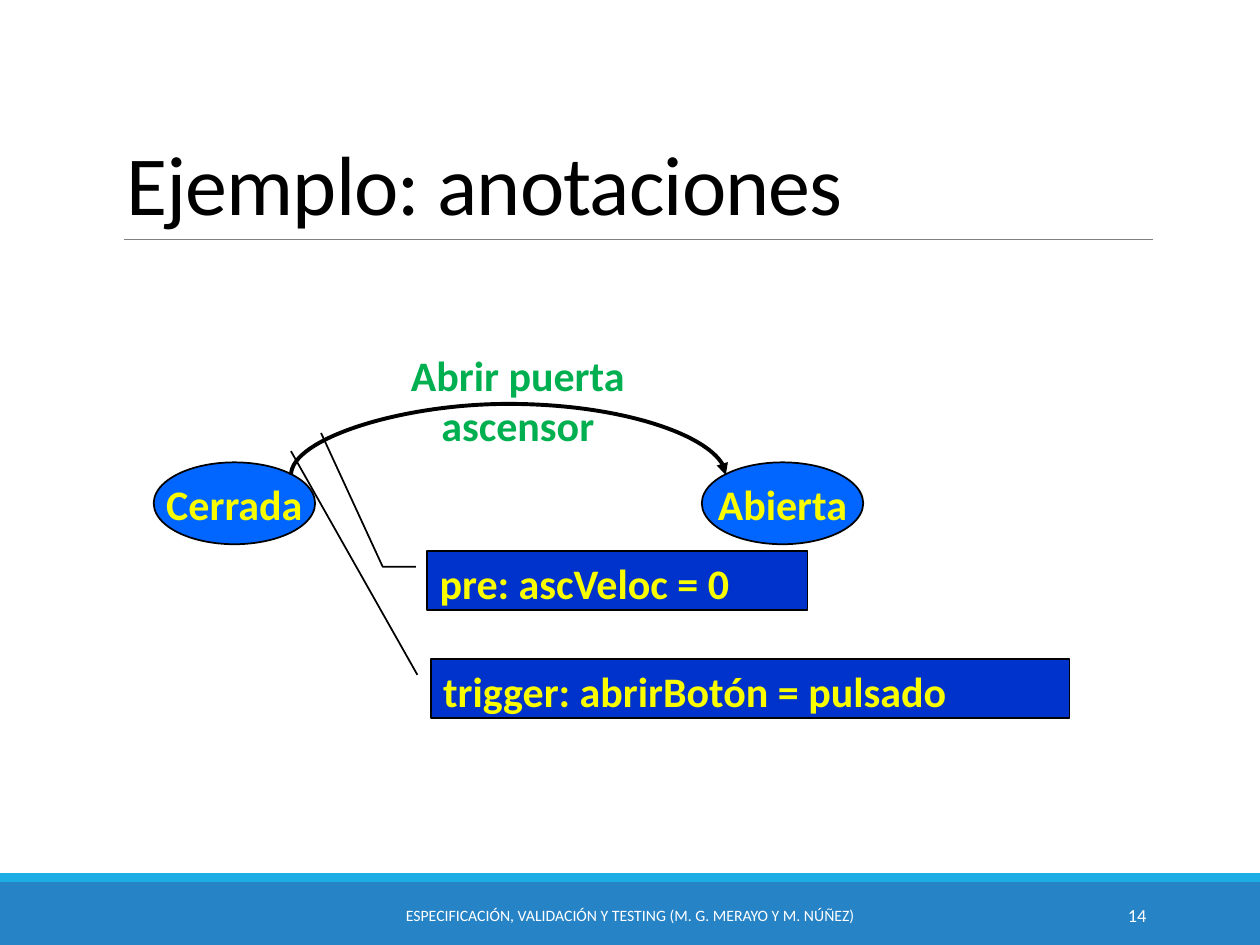
"""Builds a slide on annotated transitions between two door states."""
from lxml.etree import SubElement
from pptx import Presentation
from pptx.dml.color import RGBColor
from pptx.enum.shapes import MSO_CONNECTOR, MSO_SHAPE
from pptx.enum.text import MSO_ANCHOR, PP_ALIGN
from pptx.oxml.ns import qn
from pptx.util import Pt

TITLE = "Ejemplo: anotaciones"
FOOTER = "ESPECIFICACIÓN, VALIDACIÓN Y TESTING (M. G. MERAYO Y M. NÚÑEZ)"
PAGE = "14"
TRANSITION = "Abrir puerta ascensor"
STATES = [("Cerrada", 87.84), ("Abierta", 401.04)]
NOTES = [
    ("pre: ascVeloc = 0", (244.1, 314.8, 217.4, 33.8),
     (0.268, -0.03, 0.268, -0.117, -1.994, -0.279)),
    ("trigger: abrirBotón = pulsado", (246.2, 376.6, 365, 33.8),
     (0.268, -0.021, 0.268, -0.021, -3.516, -0.219)),
]
BANDS = [("2683C6", 504, 36), ("1CADE4", 499, 5)]
YELLOW = "FAFD00"
STATE_TOP, STATE_WIDTH, STATE_HEIGHT = 264.2, 92.2, 46.8
ARC_LEFT, ARC_RIGHT, ARC_BASE, ARC_RISE = 166.3, 414.7, 271.4, 42.9
ARC_THICKNESS = 0.12


def rgb(value):
    """Turn a hex string into a colour."""
    return RGBColor.from_string(value)


def write(shape, text, size, color, align=PP_ALIGN.LEFT, anchor=MSO_ANCHOR.TOP, bold=False, wrap=True):
    """Put one formatted paragraph in a shape and return the paragraph."""
    frame = shape.text_frame
    frame.text = text
    frame.word_wrap = wrap
    frame.vertical_anchor = anchor
    paragraph = frame.paragraphs[0]
    paragraph.alignment = align
    font = paragraph.runs[0].font
    font.name, font.size, font.bold = "Calibri", Pt(size), bold
    font.color.rgb = rgb(color)
    return paragraph


def add_box(slide, kind, place, fill, line=None):
    """Add a filled preset shape, outlined when a line colour is given."""
    box = slide.shapes.add_shape(kind, *map(Pt, place))
    box.shadow.inherit = False
    box.fill.solid()
    box.fill.fore_color.rgb = rgb(fill)
    if line:
        box.line.color.rgb = rgb(line)
        box.line.width = Pt(1)
    else:
        box.line.fill.background()
    return box


def add_text(slide, place, *content, **style):
    """Add a text box and return its paragraph."""
    return write(slide.shapes.add_textbox(*map(Pt, place)), *content, **style)


def add_line(slide, kind, ends, color, width):
    """Add a connector without shadow."""
    line = slide.shapes.add_connector(kind, *map(Pt, ends))
    line.line.color.rgb = rgb(color)
    line.line.width = Pt(width)
    SubElement(line._element.spPr, qn("a:effectLst"))
    return line


def add_arc(slide):
    """Add the curved arrow as a quarter-turned, flipped connector."""
    span = ARC_RIGHT - ARC_LEFT
    left = (ARC_LEFT + ARC_RIGHT - ARC_THICKNESS) / 2
    top = ARC_BASE - span / 2
    arc = add_line(slide, MSO_CONNECTOR.CURVE,
                   (left, top, left + ARC_THICKNESS, top + span), "000000", 2.25)
    properties = arc._element.spPr
    frame = properties.find(qn("a:xfrm"))
    frame.set("rot", "5400000")
    frame.set("flipV", "1")
    guides = properties.find(qn("a:prstGeom")).find(qn("a:avLst"))
    bend = round(-ARC_RISE / ARC_THICKNESS * 100000)
    SubElement(guides, qn("a:gd"), name="adj1", fmla=f"val {bend}")
    SubElement(properties.find(qn("a:ln")), qn("a:tailEnd"), type="triangle")


def main():
    """Build and save the slide."""
    deck = Presentation()
    deck.slide_width, deck.slide_height = Pt(720), Pt(540)
    slide = deck.slides.add_slide(deck.slide_layouts[6])

    for color, top, height in BANDS:
        add_box(slide, MSO_SHAPE.RECTANGLE, (0, top, 720, height), color)
    add_line(slide, MSO_CONNECTOR.STRAIGHT, (70.6, 136.8, 658.8, 136.8), "808080", 0.5)

    title = add_text(slide, (65.2, 22, 594, 114.5), TITLE, 48, "000000", anchor=MSO_ANCHOR.BOTTOM)
    title.line_spacing = 0.85
    title.runs[0].font._element.set("spc", "-50")
    add_text(slide, (217.4, 508.6, 285.1, 28.8), FOOTER, 9, "FFFFFF",
             align=PP_ALIGN.CENTER, anchor=MSO_ANCHOR.MIDDLE)
    add_text(slide, (584.4, 508.6, 77.8, 28.8), PAGE, 10.5, "FFFFFF",
             align=PP_ALIGN.RIGHT, anchor=MSO_ANCHOR.MIDDLE)

    for name, left in STATES:
        state = add_box(slide, MSO_SHAPE.OVAL, (left, STATE_TOP, STATE_WIDTH, STATE_HEIGHT),
                        "0066FF", "000000")
        write(state, name, 24, YELLOW, PP_ALIGN.CENTER, MSO_ANCHOR.MIDDLE, bold=True, wrap=False)
    add_arc(slide)
    add_text(slide, (212.4, 196, 167, 65.5), TRANSITION, 24, "00B050",
             align=PP_ALIGN.CENTER, bold=True)

    for text, place, pointer in NOTES:
        note = add_box(slide, MSO_SHAPE.LINE_CALLOUT_2, place, "0033CC", "000000")
        for index, value in enumerate(pointer):
            note.adjustments[index] = value
        write(note, text, 24, YELLOW, bold=True)

    deck.save("out.pptx")


if __name__ == "__main__":
    main()
